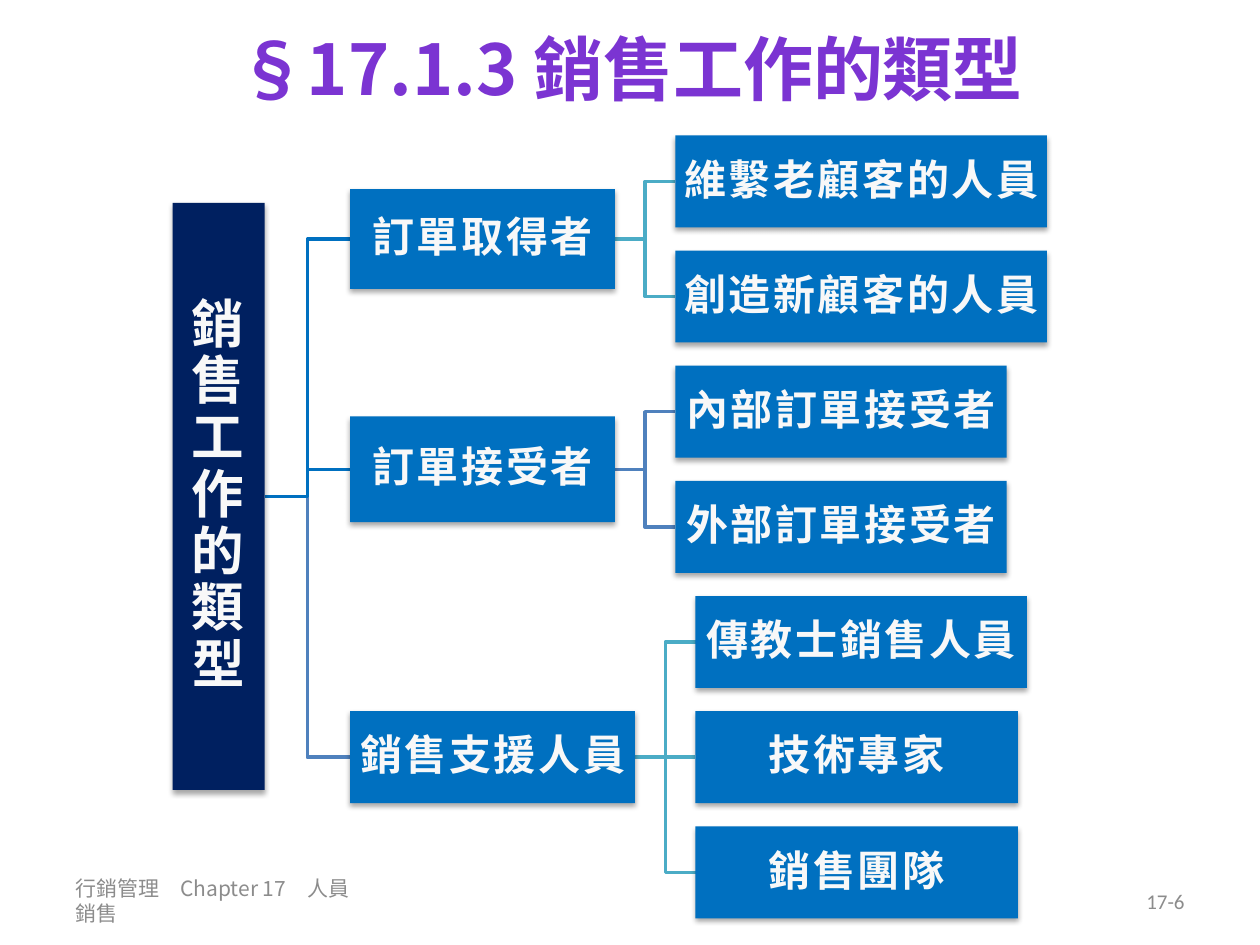
from dataclasses import dataclass

from lxml import etree
from pptx import Presentation
from pptx.dml.color import RGBColor
from pptx.enum import shapes, text
from pptx.oxml.ns import qn
from pptx.util import Inches, Pt

NAVY = RGBColor(0x00, 0x20, 0x60)
BLUE = RGBColor(0x00, 0x70, 0xC0)
STEEL = RGBColor(0x4F, 0x81, 0xBD)
TEAL = RGBColor(0x4B, 0xAC, 0xC6)
PURPLE = RGBColor(0x7B, 0x34, 0xD2)
GRAY = RGBColor(0x8C, 0x8C, 0x8C)
WHITE = RGBColor(0xF8, 0xF8, 0xF8)
CJK, LATIN = "Noto Sans CJK SC", "Calibri"
ALIGN, ANCHOR = text.PP_ALIGN, text.MSO_ANCHOR

# Tree grid, in inches: leaves sit one per row
ROW_TOP, ROW_PITCH, BOX_H = 1.44, 0.914, 0.73
BRANCH_X, LEAF_GAP = 2.78, 0.48


@dataclass
class Box:
    label: str
    x: float
    mid: float
    w: float
    h: float = BOX_H
    fill: RGBColor = BLUE
    size: float = 24
    font: str = LATIN


@dataclass
class Branch:
    label: str
    w: float
    h: float
    trunk: RGBColor
    twig: RGBColor
    leaves: list[tuple[str, float]]


ROOT = Box("銷售工作的類型", 1.37, 3.94, 0.73, 4.66, NAVY, 30, CJK)
BRANCHES = [
    Branch("訂單取得者", 2.1, 0.79, BLUE, TEAL,
           [("維繫老顧客的人員", 2.95), ("創造新顧客的人員", 2.95)]),
    Branch("訂單接受者", 2.1, 0.84, BLUE, STEEL,
           [("內部訂單接受者", 2.63), ("外部訂單接受者", 2.63)]),
    Branch("銷售支援人員", 2.26, BOX_H, STEEL, TEAL,
           [("傳教士銷售人員", 2.63), ("技術專家", 2.56), ("銷售團隊", 2.56)]),
]


def add_run(p, words: str, *, size: float, color: RGBColor, font: str = LATIN,
            bold: bool = False, spacing: float = 0) -> None:
    r = p.add_run()
    r.text = words
    r.font.size, r.font.bold, r.font.name = Pt(size), bold, font
    r.font.color.rgb = color
    rpr = r.font._element
    rpr.find(qn("a:latin")).addnext(
        etree.Element(qn("a:ea"), typeface=CJK))
    if spacing:
        rpr.set("spc", str(int(spacing * 100)))


def add_shadow(sp) -> None:
    sp.shadow.inherit = False
    effects = sp._element.spPr.find(qn("a:effectLst"))
    outer = etree.SubElement(effects, qn("a:outerShdw"), blurRad=str(Pt(3.1)),
                             dist=str(Pt(1.8)), dir="5400000", rotWithShape="0")
    black = etree.SubElement(outer, qn("a:srgbClr"), val="000000")
    etree.SubElement(black, qn("a:alpha"), val="35000")


def draw_box(s, box: Box) -> None:
    sp = s.shapes.add_shape(
        shapes.MSO_SHAPE.RECTANGLE, Inches(box.x), Inches(box.mid - box.h / 2),
        Inches(box.w), Inches(box.h))
    sp.fill.solid()
    sp.fill.fore_color.rgb = box.fill
    sp.line.fill.background()
    add_shadow(sp)
    tf = sp.text_frame
    tf.word_wrap, tf.vertical_anchor = True, ANCHOR.MIDDLE
    tf.margin_left = tf.margin_right = Inches(0.02)
    tf.margin_top = tf.margin_bottom = Inches(0.02)
    p = tf.paragraphs[0]
    p.alignment, p.line_spacing = ALIGN.CENTER, 0.9
    add_run(p, box.label, size=box.size, color=WHITE, font=box.font,
            bold=True, spacing=1.5)


def link(s, parent: Box, child: Box, color: RGBColor) -> None:
    kinds = shapes.MSO_CONNECTOR
    level = abs(parent.mid - child.mid) < 0.01
    line = s.shapes.add_connector(
        kinds.STRAIGHT if level else kinds.ELBOW,
        Inches(parent.x + parent.w), Inches(parent.mid),
        Inches(child.x), Inches(child.mid))
    line.line.color.rgb, line.line.width = color, Pt(2)
    etree.SubElement(line._element.spPr, qn("a:effectLst"))


def add_footer(s, words: str, x: float, w: float, align, font: str) -> None:
    tf = s.shapes.add_textbox(Inches(x), Inches(6.95), Inches(w),
                              Inches(0.4)).text_frame
    tf.word_wrap, tf.vertical_anchor = True, ANCHOR.MIDDLE
    p = tf.paragraphs[0]
    p.alignment = align
    add_run(p, words, size=12, color=GRAY, font=font)


def main() -> None:
    prs = Presentation()
    prs.slide_width, prs.slide_height = Inches(10), Inches(7.5)
    s = prs.slides.add_slide(prs.slide_layouts[5])

    # Title
    title = s.shapes.title
    title.left, title.top = Inches(0.5), 0
    title.width, title.height = Inches(9), Inches(1.07)
    title.text_frame.vertical_anchor = ANCHOR.MIDDLE
    p = title.text_frame.paragraphs[0]
    p.alignment = ALIGN.CENTER
    add_run(p, "§17.1.3 ", size=40, color=PURPLE, font=CJK, bold=True)
    add_run(p, "銷售工作的類型", size=40, color=PURPLE, bold=True)

    # Footer and page number
    add_footer(s, "行銷管理　Chapter 17　人員銷售", 0.5, 2.45, ALIGN.LEFT, CJK)
    add_footer(s, "17-6", 7.17, 2.33, ALIGN.RIGHT, LATIN)

    # Tree layout: each branch is centred on its leaves
    boxes, links, row = [ROOT], [], 0
    for b in BRANCHES:
        mid = ROW_TOP + ROW_PITCH * (row + (len(b.leaves) - 1) / 2)
        branch = Box(b.label, BRANCH_X, mid, b.w, b.h)
        boxes.append(branch)
        links.append((ROOT, branch, b.trunk))
        for label, w in b.leaves:
            leaf = Box(label, BRANCH_X + b.w + LEAF_GAP,
                       ROW_TOP + ROW_PITCH * row, w)
            boxes.append(leaf)
            links.append((branch, leaf, b.twig))
            row += 1

    # Lines lie behind the boxes
    for parent, child, color in reversed(links):
        link(s, parent, child, color)
    for box in boxes:
        draw_box(s, box)

    prs.save("out.pptx")


if __name__ == "__main__":
    main()
